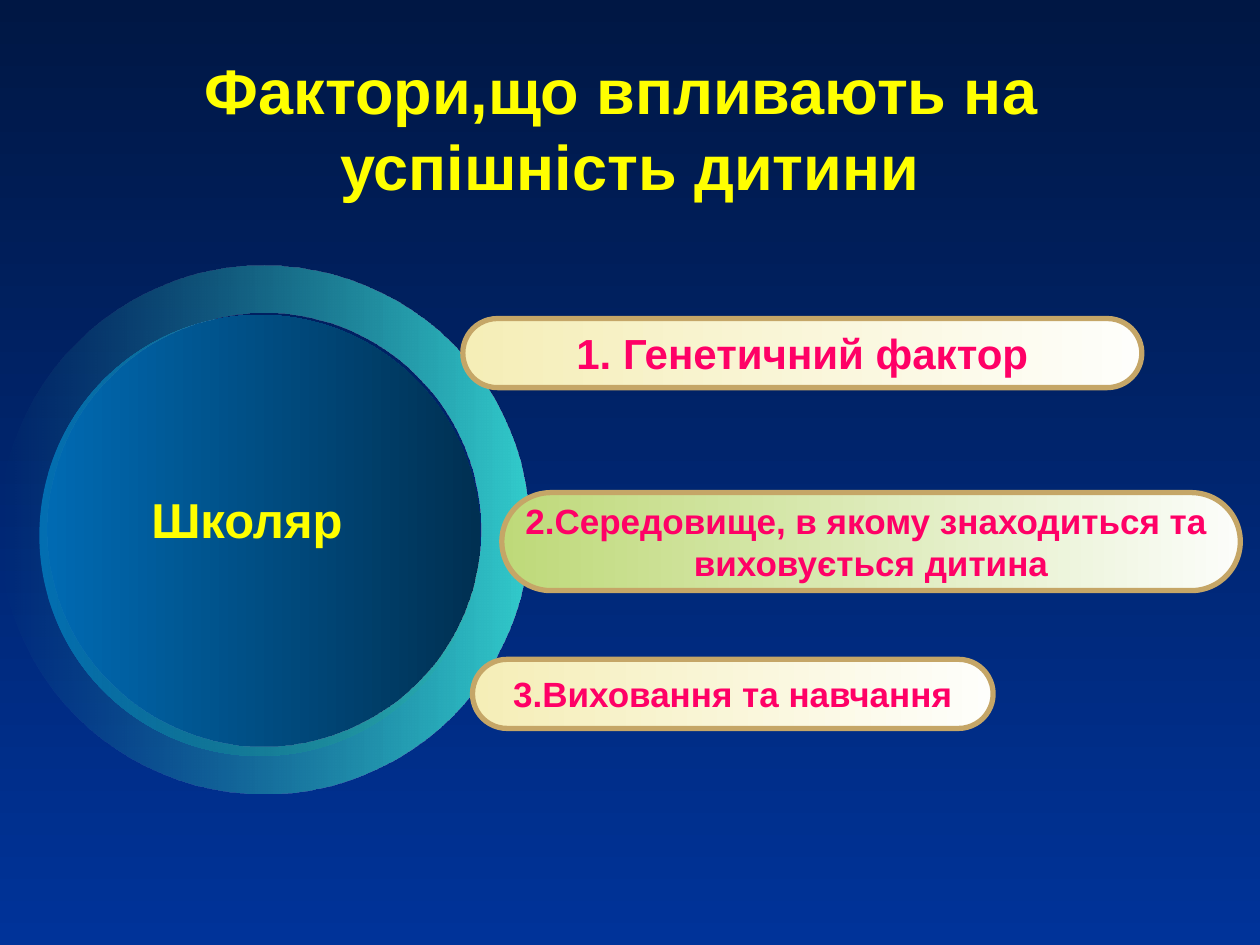
from lxml.etree import SubElement
from pptx import Presentation
from pptx.dml.color import RGBColor
from pptx.enum.shapes import MSO_SHAPE as SHAPE
from pptx.enum.text import MSO_ANCHOR as ANCHOR, MSO_AUTO_SIZE as AUTO, PP_ALIGN as ALIGN
from pptx.oxml.ns import qn
from pptx.util import Pt

YELLOW = RGBColor(0xFF, 0xFF, 0x00)
PINK = RGBColor(0xFF, 0x00, 0x66)
GOLD = RGBColor(0xC5, 0xA6, 0x67)
NIGHT = RGBColor(0x00, 0x17, 0x44)
ROYAL = RGBColor(0x00, 0x33, 0x99)
BLUE = RGBColor(0x00, 0x6B, 0xB4)
DEEP_BLUE = RGBColor(0x00, 0x30, 0x52)
TEAL = RGBColor(0x24, 0x92, 0x92)
AQUA = RGBColor(0x33, 0xCC, 0xCC)
CREAM = RGBColor(0xF5, 0xEE, 0xB7)
IVORY = RGBColor(0xFE, 0xFE, 0xFB)
LIME = RGBColor(0xBE, 0xD9, 0x79)
PALE_LIME = RGBColor(0xFC, 0xFD, 0xFA)


def set_gradient(fill, start, end, angle=0):
    fill.gradient()
    fill.gradient_angle = angle
    for stop, color, position in zip(fill.gradient_stops, (start, end), (0, 1)):
        stop.color.rgb = color
        stop.position = position


def set_text(tf, text, size, color, anchor=ANCHOR.MIDDLE, wrap=False, auto=AUTO.NONE):
    """Write bold centred text; a newline starts a paragraph, \\v breaks a line."""
    tf.text = text
    tf.word_wrap = wrap
    tf.auto_size = auto
    tf.vertical_anchor = anchor
    for p in tf.paragraphs:
        p.alignment = ALIGN.CENTER
        for r in p.runs:
            r.font.name = "Arial"
            r.font.size = Pt(size)
            r.font.bold = True
            r.font.color.rgb = color


prs = Presentation()
prs.slide_width, prs.slide_height = Pt(720), Pt(540)
s = prs.slides.add_slide(prs.slide_layouts[5])
set_gradient(s.background.fill, NIGHT, ROYAL, angle=270)

title = s.shapes.title
title.left, title.top, title.width, title.height = Pt(0), Pt(16.5), Pt(720), Pt(112.5)
set_text(title.text_frame, "Фактори,що впливають на \vуспішність дитини", 36, YELLOW, wrap=True)

# Disc with a ring that fades in from the left
disc = s.shapes.add_shape(SHAPE.OVAL, Pt(22.5), Pt(180), Pt(252), Pt(252))
set_gradient(disc.fill, BLUE, DEEP_BLUE)
ring = s.shapes.add_shape(SHAPE.DONUT, Pt(0), Pt(151.5), Pt(302), Pt(302))
ring.adjustments[0] = 0.09
set_gradient(ring.fill, TEAL, AQUA)
first_color = next(ring._element.spPr.iter(qn("a:srgbClr")))
SubElement(first_color, qn("a:alpha"), val="0")
for sp in (disc, ring):
    sp.line.fill.background()
    sp.shadow.inherit = False

# Factors: text, size, left, top, width, height, gradient colours
factors = [
    ("1. Генетичний фактор", 24, 264.5, 182, 388, 39.5, CREAM, IVORY),
    ("2.Середовище, в якому знаходиться та \nвиховується дитина", 20,
     286.75, 281.5, 422, 56, LIME, PALE_LIME),
    ("3.Виховання та навчання", 20, 270, 376.75, 297.5, 39.5, CREAM, IVORY),
]
for text, size, left, top, width, height, start, end in factors:
    sp = s.shapes.add_shape(SHAPE.ROUNDED_RECTANGLE, Pt(left), Pt(top), Pt(width), Pt(height))
    sp.adjustments[0] = 0.5
    sp.shadow.inherit = False
    set_gradient(sp.fill, start, end)
    sp.line.color.rgb = GOLD
    sp.line.width = Pt(3)
    set_text(sp.text_frame, text, size, PINK)

label = s.shapes.add_textbox(Pt(78.5), Pt(276), Pt(133), Pt(41))
set_text(label.text_frame, "Школяр ", 28, YELLOW, anchor=ANCHOR.TOP, auto=AUTO.SHAPE_TO_FIT_TEXT)

prs.save("out.pptx")
